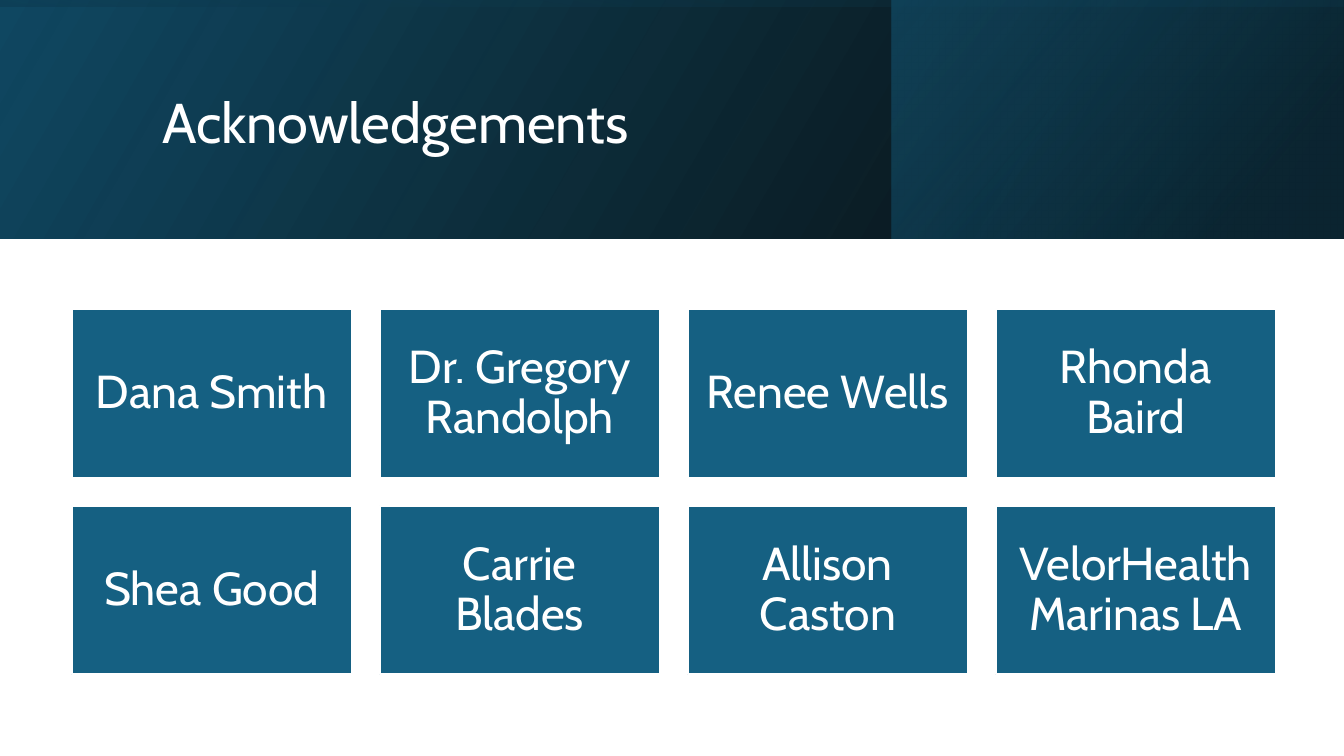
from pptx import Presentation
from pptx.dml.color import RGBColor
from pptx.enum.shapes import MSO_SHAPE
from pptx.enum.text import MSO_ANCHOR, PP_ALIGN
from pptx.oxml.ns import qn
from pptx.oxml.xmlchemy import OxmlElement
from pptx.util import Inches, Pt

RECT = MSO_SHAPE.RECTANGLE
MIDDLE = MSO_ANCHOR.MIDDLE
LEFT, CENTER = PP_ALIGN.LEFT, PP_ALIGN.CENTER
WHITE = RGBColor(0xFF, 0xFF, 0xFF)
BLACK = RGBColor(0x00, 0x00, 0x00)
BLUE = RGBColor(0x15, 0x60, 0x82)
DARK_BLUE = RGBColor(0x10, 0x48, 0x62)
NAVY = RGBColor(0x0B, 0x30, 0x41)


def write_text(sp, text, size, align, inset_x=0.1, inset_y=0.05):
    tf = sp.text_frame
    tf.word_wrap = True
    tf.vertical_anchor = MIDDLE
    tf.margin_left = tf.margin_right = Inches(inset_x)
    tf.margin_top = tf.margin_bottom = Inches(inset_y)
    p = tf.paragraphs[0]
    p.alignment = align
    p.line_spacing = 0.9
    r = p.add_run()
    r.text = text
    r.font.size = Pt(size)
    r.font.name = "Cabin"
    r.font.color.rgb = WHITE


prs = Presentation()
prs.slide_width, prs.slide_height = Inches(13.33), Inches(7.5)
s = prs.slides.add_slide(prs.slide_layouts[5])

# Header bands: box, rotation, gradient angle, stops (position, colour, opacity %)
bands = [
    ((0, 0, 13.33, 2.37), 0, 30, [(0, BLACK, 96), (1, DARK_BLUE, 100)]),
    ((8.84, 0, 4.48, 2.37), 0, 40, [(0.19, NAVY, 68), (1, BLUE, 48)]),
    ((5.48, -5.48, 2.37, 13.33), 270, 10, [(0.23, DARK_BLUE, 16), (0.99, BLACK, 45)]),
]
for box, rotation, angle, stops in bands:
    sp = s.shapes.add_shape(RECT, *[Inches(v) for v in box])
    sp.rotation = rotation
    sp.shadow.inherit = False
    sp.line.fill.background()
    sp.fill.gradient()
    sp.fill.gradient_angle = angle
    spPr = sp._element.spPr
    spPr.find(qn("a:xfrm")).set("flipH", "1")
    for stop, (position, color, _) in zip(sp.fill.gradient_stops, stops):
        stop.position = position
        stop.color.rgb = color
    for clr, (_, _, opacity) in zip(spPr.iter(qn("a:srgbClr")), stops):
        alpha = OxmlElement("a:alpha")
        alpha.set("val", str(opacity * 1000))
        clr.append(alpha)

# Title, brought in front of the bands
title = s.shapes.title
title.left, title.top = Inches(1.51), Inches(0.38)
title.width, title.height = Inches(10.63), Inches(1.72)
write_text(title, "Acknowledgements", 40, LEFT)
sp._element.addnext(title._element)

# Grid of names
names = [
    "Dana Smith", "Dr. Gregory Randolph", "Renee Wells", "Rhonda Baird",
    "Shea Good", "Carrie Blades", "Allison Caston", "VelorHealth Marinas LA",
]
COLS = 4
for i, name in enumerate(names):
    row, col = divmod(i, COLS)
    sp = s.shapes.add_shape(RECT, Inches(0.71 + col * 3.055), Inches(3.07 + row * 1.95),
                            Inches(2.78), Inches(1.67))
    sp.shadow.inherit = False
    sp.fill.solid()
    sp.fill.fore_color.rgb = BLUE
    sp.line.color.rgb = WHITE
    sp.line.width = Pt(1.5)
    write_text(sp, name, 33, CENTER, inset_x=0.14, inset_y=0.14)

prs.save("out.pptx")
